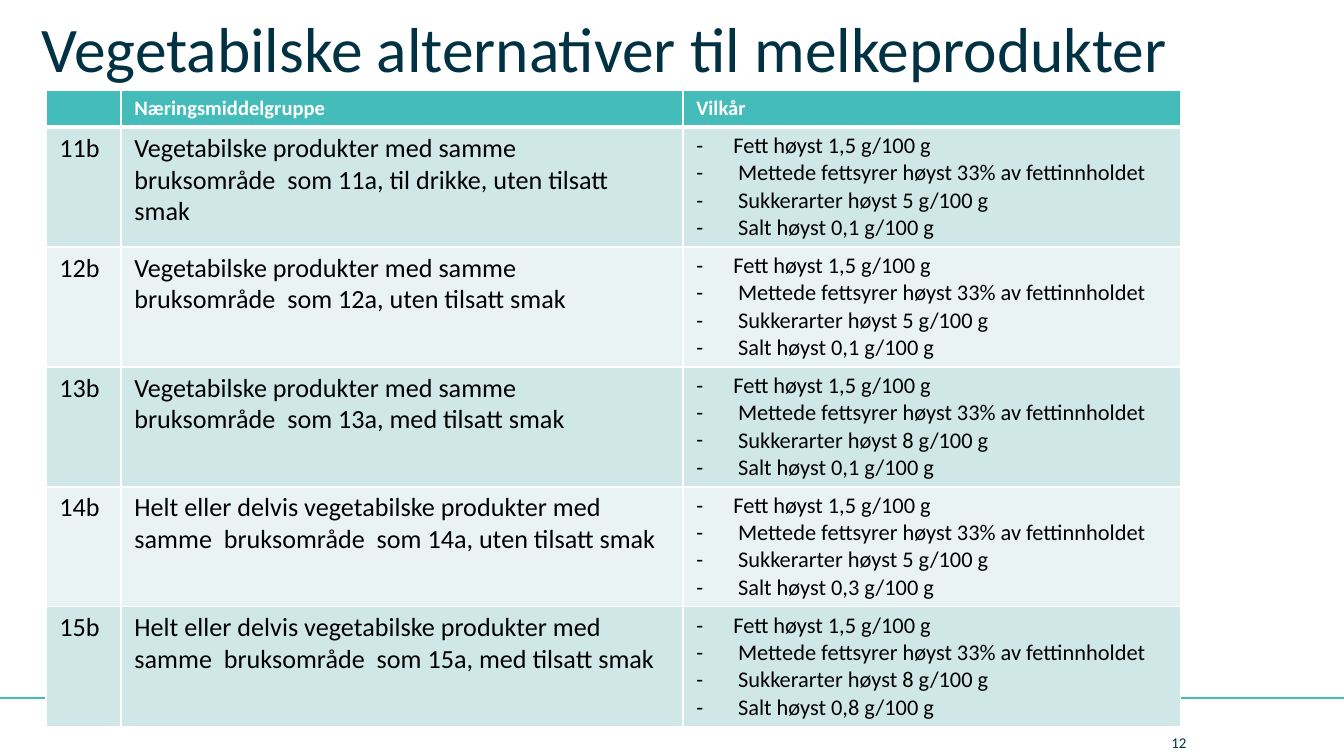
from dataclasses import dataclass

from lxml import etree
from pptx import Presentation
from pptx import util as u
from pptx.dml.color import RGBColor
from pptx.enum import shapes, text
from pptx.oxml.ns import qn

COLORS = {
    "teal": "43BCBA",
    "navy": "003244",
    "white": "FFFFFF",
    "black": "000000",
    "band_dark": "CFE7E7",
    "band_light": "E9F3F3",
}
COL_WIDTHS = (1.42, 10.62, 9.4)
HEADER_HEIGHT, ROW_HEIGHT = 0.69, 2.13
HEADINGS = ("", "Næringsmiddelgruppe", "Vilkår")


@dataclass
class FoodGroup:
    code: str
    name: str
    sugar: str
    salt: str

    def terms(self) -> list[str]:
        return [
            "Fett høyst 1,5 g/100 g",
            "Mettede fettsyrer høyst 33% av fettinnholdet",
            f"Sukkerarter høyst {self.sugar} g/100 g",
            f"Salt høyst {self.salt} g/100 g",
        ]


PLANT = "Vegetabilske produkter med samme  bruksområde  som "
PARTLY = "Helt eller delvis vegetabilske produkter med samme  bruksområde  som "
GROUPS = [
    FoodGroup("11b", PLANT + "11a, til drikke, uten tilsatt smak", "5", "0,1"),
    FoodGroup("12b", PLANT + "12a, uten tilsatt smak", "5", "0,1"),
    FoodGroup("13b", PLANT + "13a, med tilsatt smak", "8", "0,1"),
    FoodGroup("14b", PARTLY + "14a, uten tilsatt smak", "5", "0,3"),
    FoodGroup("15b", PARTLY + "15a, med tilsatt smak", "8", "0,8"),
]


def rgb(name: str) -> RGBColor:
    return RGBColor.from_string(COLORS[name])


def set_attrs(obj, values: dict) -> None:
    for key, value in values.items():
        setattr(obj, key, value)


def write(p, content: str, size: float, color: str, bold: bool = False) -> None:
    r = p.add_run()
    r.text = content
    set_attrs(r.font, {"size": u.Pt(size), "name": "Calibri", "bold": bold})
    r.font.color.rgb = rgb(color)


def add_dash(p, indent: float) -> None:
    pPr = p._p.get_or_add_pPr()
    pPr.set("marL", str(u.Cm(indent)))
    pPr.set("indent", str(-u.Cm(indent)))
    etree.SubElement(pPr, qn("a:buFont")).set("typeface", "Calibri")
    etree.SubElement(pPr, qn("a:buChar")).set("char", "-")


def style_cell(cell, fill: str, top: float = 1, bottom: float = 1) -> None:
    set_attrs(cell, {
        "margin_left": u.Cm(0.25), "margin_right": u.Cm(0.25),
        "margin_top": u.Cm(0.1), "margin_bottom": u.Cm(0.1),
        "vertical_anchor": text.MSO_ANCHOR.TOP,
    })
    tcPr = cell._tc.get_or_add_tcPr()
    for side, width in {"lnL": 1, "lnR": 1, "lnT": top, "lnB": bottom}.items():
        ln = etree.SubElement(tcPr, qn(f"a:{side}"), w=str(u.Pt(width)))
        solid = etree.SubElement(ln, qn("a:solidFill"))
        etree.SubElement(solid, qn("a:srgbClr"), val=COLORS["white"])
    cell.fill.solid()
    cell.fill.fore_color.rgb = rgb(fill)


def add_title(s, content: str) -> None:
    sp = s.shapes.title
    set_attrs(sp, {"left": u.Cm(0.53), "top": u.Cm(0),
                   "width": u.Cm(23.6), "height": u.Cm(1.73)})
    tf = sp.text_frame
    set_attrs(tf, {"vertical_anchor": text.MSO_ANCHOR.BOTTOM, "word_wrap": True,
                   "auto_size": text.MSO_AUTO_SIZE.NONE})
    p = tf.paragraphs[0]
    p.alignment = text.PP_ALIGN.LEFT
    write(p, content, 34, "navy")


def add_rule(s, width: int) -> None:
    y = u.Cm(13.18)
    line = s.shapes.add_connector(shapes.MSO_CONNECTOR.STRAIGHT, 0, y, width, y)
    line.line.color.rgb = rgb("teal")
    line.line.width = u.Pt(1)
    etree.SubElement(line._element.spPr, qn("a:effectLst"))


def add_groups_table(s, groups: list[FoodGroup]) -> None:
    height = HEADER_HEIGHT + ROW_HEIGHT * len(groups)
    table = s.shapes.add_table(len(groups) + 1, len(COL_WIDTHS), u.Cm(0.87), u.Cm(1.71),
                               u.Cm(sum(COL_WIDTHS)), u.Cm(height)).table
    for col, width in zip(table.columns, COL_WIDTHS):
        col.width = u.Cm(width)
    for i, row in enumerate(table.rows):
        row.height = u.Cm(ROW_HEIGHT if i else HEADER_HEIGHT)

    for col, heading in enumerate(HEADINGS):
        cell = table.cell(0, col)
        style_cell(cell, "teal", bottom=3)
        p = cell.text_frame.paragraphs[0]
        if heading:
            write(p, heading, 11, "white", True)
        else:
            etree.SubElement(p._p, qn("a:endParaRPr"), sz="1100")

    for i, group in enumerate(groups, 1):
        cells = [table.cell(i, col) for col in range(len(COL_WIDTHS))]
        for cell in cells:
            style_cell(cell, "band_dark" if i % 2 else "band_light", top=3 if i == 1 else 1)
        for cell, content in zip(cells, (group.code, group.name)):
            write(cell.text_frame.paragraphs[0], content, 14, "black")
        tf = cells[2].text_frame
        for k, term in enumerate(group.terms()):
            p = tf.add_paragraph() if k else tf.paragraphs[0]
            add_dash(p, 0.79 if k else 0.7)
            write(p, term, 12, "black")


def add_page_number(s, number: str) -> None:
    sp = s.shapes.add_textbox(u.Cm(21.89), u.Cm(13.87), u.Cm(1.8), u.Cm(0.3))
    tf = sp.text_frame
    set_attrs(tf, {"margin_top": 0, "margin_bottom": 0, "word_wrap": True,
                   "vertical_anchor": text.MSO_ANCHOR.MIDDLE})
    write(tf.paragraphs[0], number, 8, "navy")


def main() -> None:
    prs = Presentation()
    set_attrs(prs, {"slide_width": u.Cm(25.4), "slide_height": u.Cm(14.28)})
    s = prs.slides.add_slide(prs.slide_layouts[5])
    add_rule(s, prs.slide_width)
    add_title(s, "Vegetabilske alternativer til melkeprodukter")
    add_groups_table(s, GROUPS)
    add_page_number(s, "12")
    prs.save("out.pptx")


if __name__ == "__main__":
    main()
